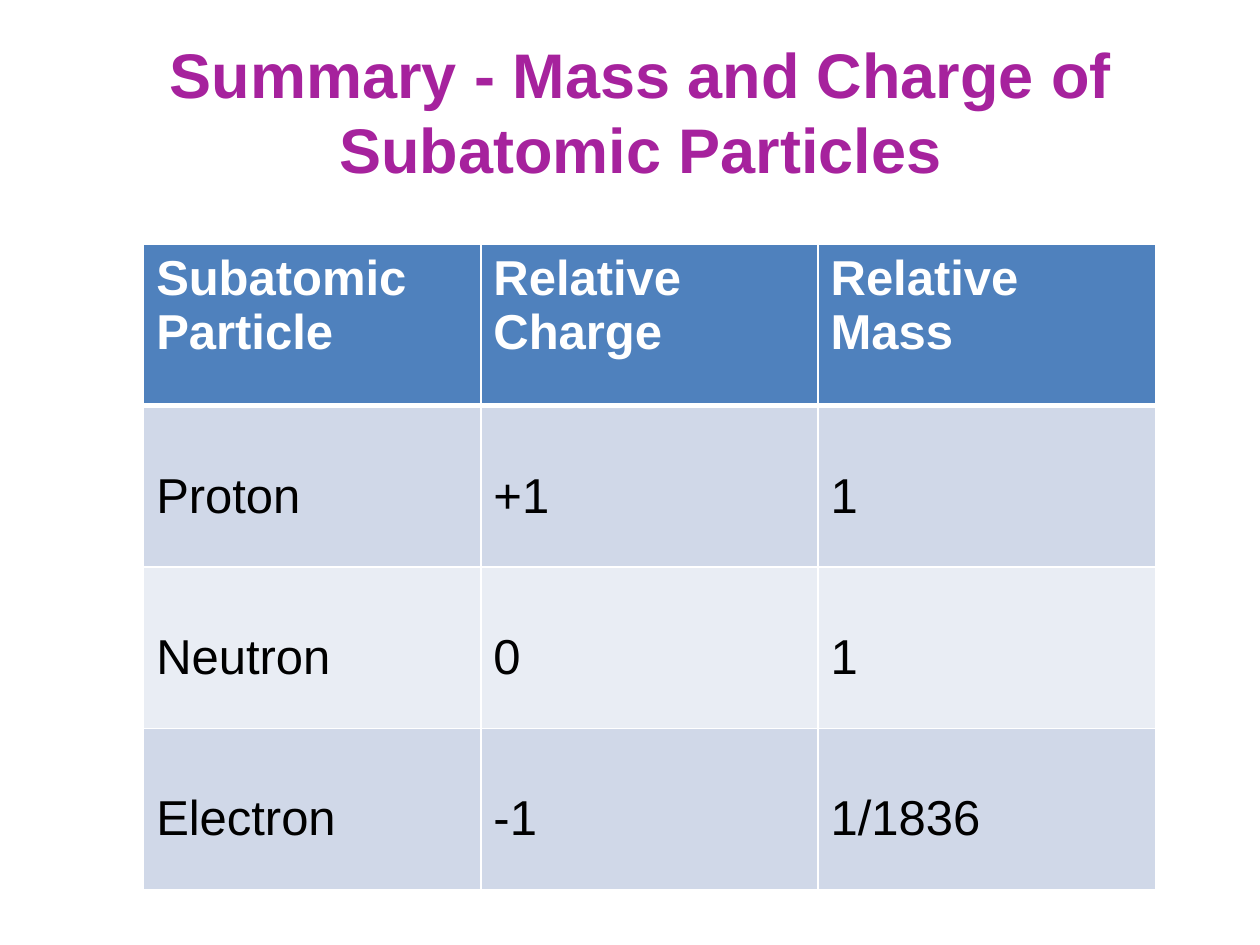
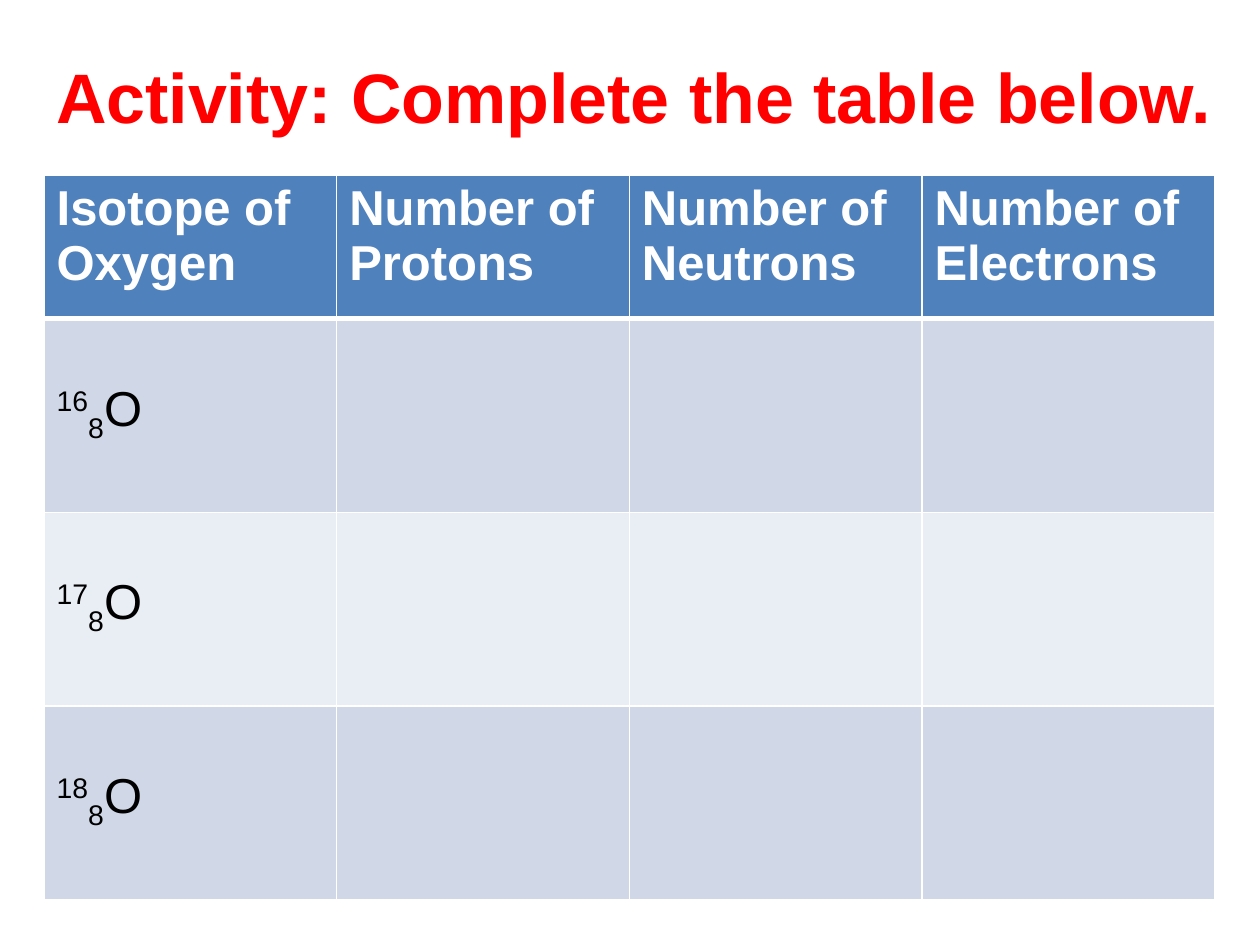
from pptx import Presentation
from pptx.dml.color import RGBColor
from pptx.enum.text import MSO_ANCHOR, PP_ALIGN
from pptx.oxml import parse_xml
from pptx.oxml.ns import nsdecls
from pptx.util import Inches, Pt

COLORS = {
    "purple": "A6229D", "red": "FF0000", "header": "4F81BD",
    "odd": "D0D8E8", "even": "E9EDF4", "white": "FFFFFF", "black": "000000",
}
FONT = "Arial"
TABLE_SIZE = 28
LABEL_DROP = 0.5
SUPERSCRIPT, SUBSCRIPT = 30000, -25000


def isotope(mass, number, symbol):
    return [(mass, SUPERSCRIPT), (number, SUBSCRIPT), (symbol, 0)]


SLIDES = [
    {
        "title": "Summary - Mass and Charge of Subatomic Particles",
        "title_style": {"size": 36, "color": "purple"},
        "title_box": (0.28, 0.13, 9.61, 1.5),
        "table_box": (1.14, 1.94, 8.03, 5.12),
        "header_height": 1.28,
        "rows": [
            ["Subatomic Particle", "Relative Charge", "Relative Mass"],
            ["Proton", "+1", "1"],
            ["Neutron", "0", "1"],
            ["Electron", "-1", "1/1836"],
        ],
    },
    {
        "title": "Activity: Complete the table below.",
        "title_style": {"size": 40, "color": "red"},
        "title_box": (0.15, 0.13, 9.76, 1.26),
        "table_box": (0.35, 1.39, 9.29, 5.75),
        "header_height": 1.14,
        "rows": [
            ["Isotope of Oxygen", "Number of Protons", "Number of Neutrons", "Number of Electrons"],
            [isotope("16", "8", "O"), "", "", ""],
            [isotope("17", "8", "O"), "", "", ""],
            [isotope("18", "8", "O"), "", "", ""],
        ],
    },
]


def rgb(name):
    return RGBColor.from_string(COLORS[name])


def write(frame, text, size=TABLE_SIZE, color="black", bold=False, align=PP_ALIGN.LEFT):
    frame.word_wrap = True
    paragraph = frame.paragraphs[0]
    paragraph.alignment = align
    paragraph.font.size = Pt(size)
    pieces = [(text, 0)] if isinstance(text, str) else text
    for piece, baseline in pieces:
        if not piece:
            continue
        run = paragraph.add_run()
        run.text = piece
        run.font.name = FONT
        run.font.size = Pt(size)
        run.font.bold = bold
        run.font.color.rgb = rgb(color)
        if baseline:
            run.font._element.set("baseline", str(baseline))


def set_borders(cell, top, bottom):
    properties = cell._tc.get_or_add_tcPr()
    widths = {"lnL": 1, "lnR": 1, "lnT": top, "lnB": bottom}
    for position, (side, width) in enumerate(widths.items()):
        properties.insert(position, parse_xml(
            f'<a:{side} {nsdecls("a")} w="{Pt(width)}"><a:solidFill>'
            f'<a:srgbClr val="{COLORS["white"]}"/></a:solidFill></a:{side}>'))


def add_title(slide, content):
    title = slide.shapes.add_textbox(*map(Inches, content["title_box"]))
    title.text_frame.vertical_anchor = MSO_ANCHOR.MIDDLE
    write(title.text_frame, content["title"], bold=True,
          align=PP_ALIGN.CENTER, **content["title_style"])


def add_particle_table(slide, content):
    rows = content["rows"]
    left, top, width, height = content["table_box"]
    table = slide.shapes.add_table(
        len(rows), len(rows[0]), *map(Inches, (left, top, width, height))).table
    for column in table.columns:
        column.width = Inches(width / len(rows[0]))
    body_height = (height - content["header_height"]) / (len(rows) - 1)
    for r, row in enumerate(rows):
        is_header = r == 0
        table.rows[r].height = Inches(content["header_height"] if is_header else body_height)
        band = "header" if is_header else ("odd" if r % 2 else "even")
        for c, text in enumerate(row):
            cell = table.cell(r, c)
            cell.fill.solid()
            cell.fill.fore_color.rgb = rgb(band)
            set_borders(cell, top=3 if r == 1 else 1, bottom=3 if is_header else 1)
            if not is_header:
                cell.margin_top = Inches(LABEL_DROP)
            write(cell.text_frame, text, bold=is_header,
                  color="white" if is_header else "black")


def main():
    deck = Presentation()
    deck.slide_width, deck.slide_height = Inches(10), Inches(7.5)
    for content in SLIDES:
        slide = deck.slides.add_slide(deck.slide_layouts[6])
        add_title(slide, content)
        add_particle_table(slide, content)
    deck.save("out.pptx")


if __name__ == "__main__":
    main()
